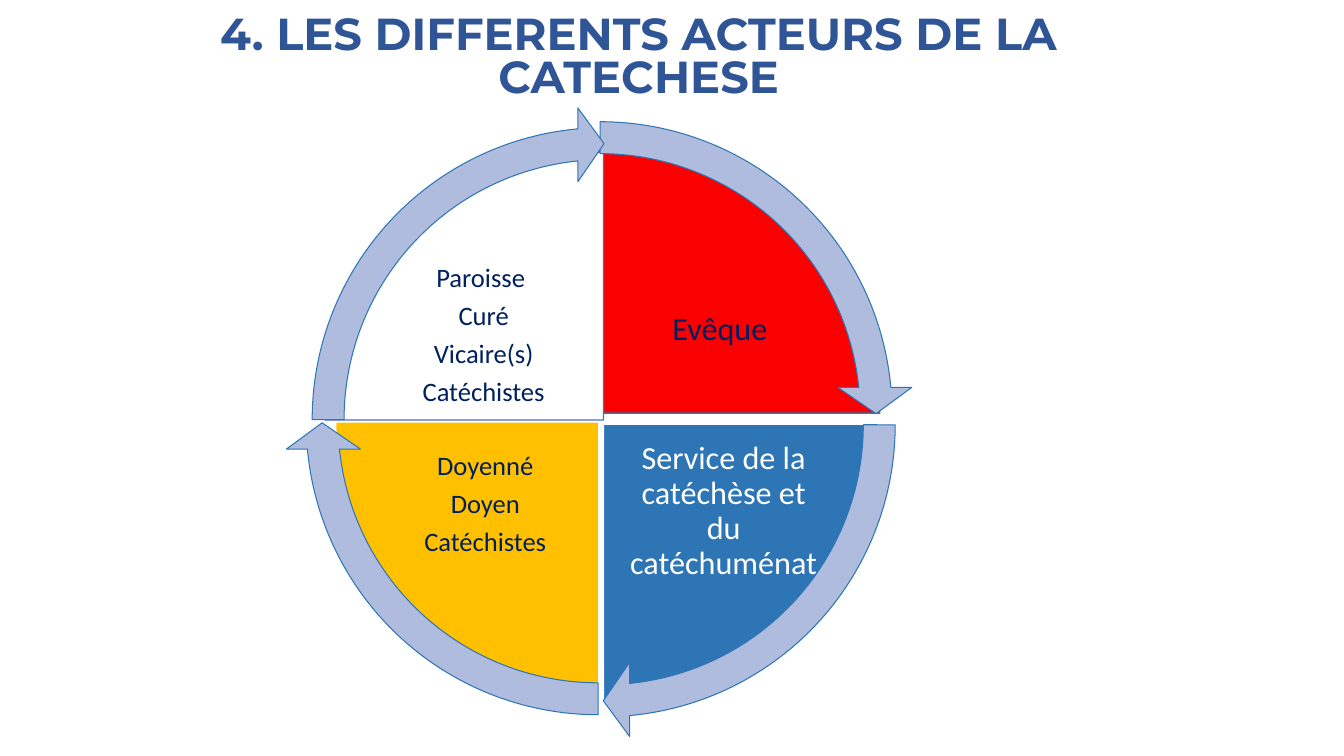
from pptx import Presentation
from pptx.dml.color import RGBColor
from pptx.enum.shapes import MSO_SHAPE
from pptx.enum.text import MSO_ANCHOR, PP_ALIGN
from pptx.util import Cm, Pt

PIE = MSO_SHAPE.PIE
ARROW = MSO_SHAPE.CIRCULAR_ARROW
MIDDLE = MSO_ANCHOR.MIDDLE
TOP = MSO_ANCHOR.TOP
CENTER = PP_ALIGN.CENTER

TURN = 216
QUARTER = TURN / 4
SWEEP = 50.725
RING = 15.77
NAVY = "002060"
WHITE = "FFFFFF"
BLUE = "2E75B6"

PARTS = [
    dict(start=162, fill="FA0000", line=BLUE, pie=(8.05, 3.68, 14.12, 13.46),
         ring=(7.24, 2.54), box=(15.54, 6.48, 5.21, 3.68),
         words=["Evêque"], size=23, ink=NAVY),
    dict(start=0, fill=BLUE, line=WHITE, pie=(8.2, 3.68, 14.02, 14.02),
         ring=(7.32, 2.82), box=(15.65, 10.97, 5.18, 3.84),
         words=["Service de la catéchèse et du catéchuménat"], size=23, ink=WHITE),
    dict(start=54, fill="FFC000", line=WHITE, pie=(8.46, 3.96, 13.26, 13.34),
         ring=(7.19, 2.77), box=(9.78, 10.9, 4.9, 3.66),
         words=["Doyenné", "Doyen", "Catéchistes"], size=19, ink=NAVY),
    dict(start=108, fill=WHITE, line="4472C4", pie=(8.2, 3.84, 14.02, 13.49),
         ring=(7.34, 2.69), box=(9.6, 6.63, 5.18, 3.68),
         words=["Paroisse ", "Curé", "Vicaire(s)", "Catéchistes"], size=19, ink=NAVY),
]


def color(code):
    return RGBColor.from_string(code)


def add_form(slide, kind, area, fill, line, width, turns):
    form = slide.shapes.add_shape(kind, *map(Cm, area))
    form.shadow.inherit = False
    form.fill.solid()
    form.fill.fore_color.rgb = color(fill)
    form.line.color.rgb = color(line)
    form.line.width = Pt(width)
    for spot, turn in enumerate(turns):
        form.adjustments[spot] = turn


def add_text(slide, area, words, size, ink, font="Calibri", bold=False,
             space=0.9, after=0, inset=0.08, anchor=MIDDLE):
    frame = slide.shapes.add_textbox(*map(Cm, area)).text_frame
    frame.word_wrap = True
    frame.vertical_anchor = anchor
    frame.margin_left = frame.margin_right = Cm(inset)
    frame.margin_top = frame.margin_bottom = Cm(inset)
    for spot, word in enumerate(words):
        para = frame.paragraphs[0] if spot == 0 else frame.add_paragraph()
        para.alignment = CENTER
        para.line_spacing = space
        para.space_after = Pt(after)
        run = para.add_run()
        run.text = word
        run.font.name = font
        run.font.size = Pt(size)
        run.font.bold = bold
        run.font.color.rgb = color(ink)


def add_part(slide, part):
    start = part["start"]
    add_form(slide, PIE, part["pie"], part["fill"], part["line"], 1,
             [start, (start + QUARTER) % TURN])
    add_text(slide, part["box"], part["words"], part["size"], part["ink"],
             after=part["size"] * 0.35)


def add_arrow(slide, part):
    start = part["start"]
    add_form(slide, ARROW, (*part["ring"], RING, RING), "B0BCDE", BLUE, 0.75,
             [0.051, 3.275, start + SWEEP, start, 0.059])


def main():
    deck = Presentation()
    deck.slide_width = Cm(33.87)
    deck.slide_height = Cm(19.05)
    slide = deck.slides.add_slide(deck.slide_layouts[6])
    slide.background.fill.solid()
    slide.background.fill.fore_color.rgb = color(WHITE)
    add_text(slide, (2.31, 0.41, 27.58, 2.4),
             ["4. LES DIFFERENTS ACTEURS DE LA CATECHESE"], 32, "2F5597",
             font="Montserrat", bold=True, space=0.8, inset=0, anchor=TOP)
    for part in PARTS:
        add_part(slide, part)
    for part in PARTS:
        add_arrow(slide, part)
    deck.save("out.pptx")


if __name__ == "__main__":
    main()
